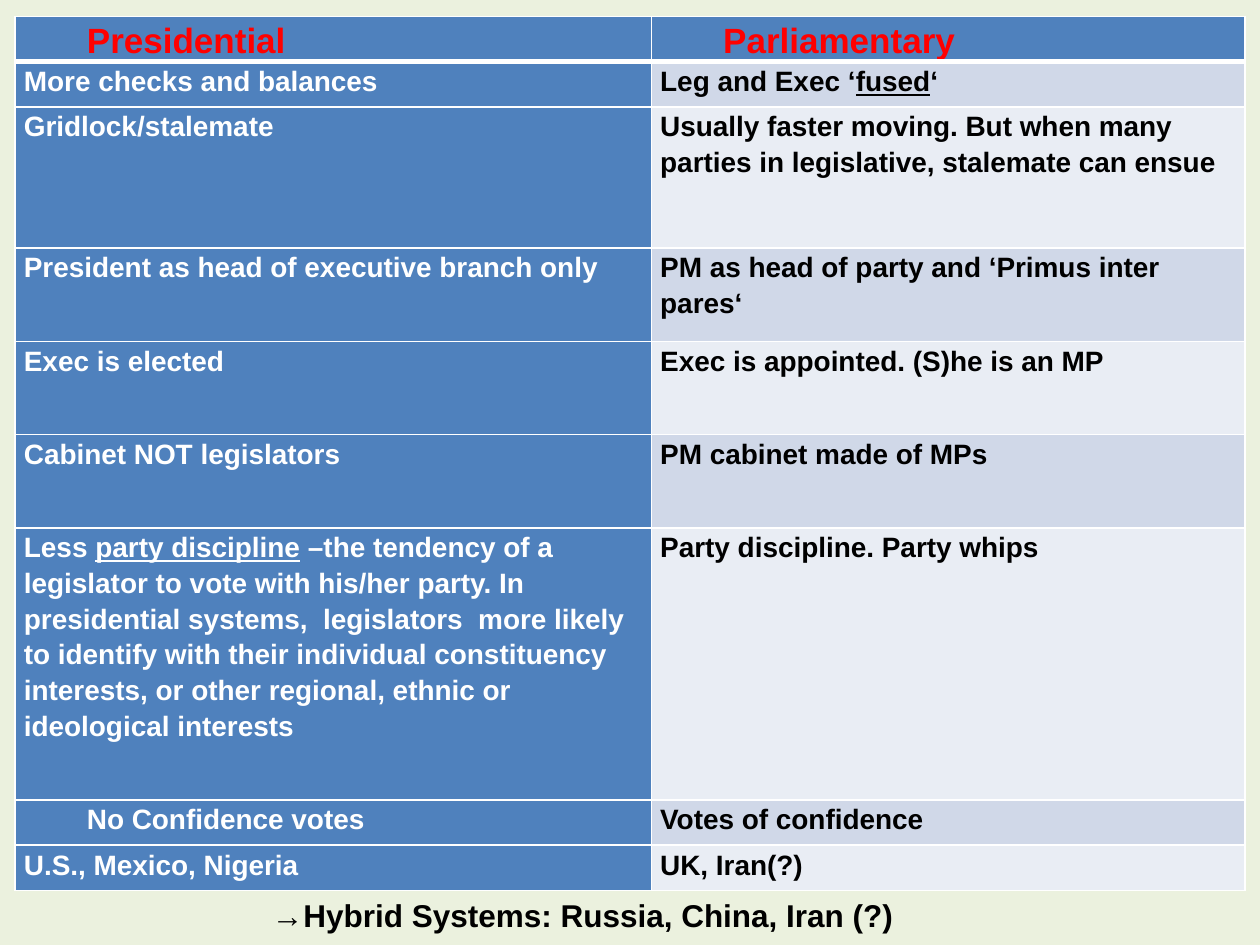
import pptx
import pptx.dml.color
import pptx.oxml
import pptx.oxml.ns
import pptx.util
from pptx.util import Inches

RGBColor = pptx.dml.color.RGBColor
BACKGROUND = RGBColor(0xEB, 0xF1, 0xDE)
BLUE = RGBColor(0x4F, 0x81, 0xBD)
BANDS = [RGBColor(0xE9, 0xED, 0xF4), RGBColor(0xD0, 0xD8, 0xE8)]
RED = RGBColor(0xFF, 0x00, 0x00)
WHITE = RGBColor(0xFF, 0xFF, 0xFF)
BLACK = RGBColor(0x00, 0x00, 0x00)

# Row height, presidential text, parliamentary text; "_" encloses underlined words.
ROWS = [
    (0.36, "Presidential", "Parliamentary"),
    (0.36, "More checks and balances", "Leg and Exec ‘_fused_‘"),
    (1.12, "Gridlock/stalemate",
     "Usually faster moving. But when many parties in legislative, stalemate can ensue"),
    (0.74, "President as head of executive branch only",
     "PM as head of party and ‘Primus inter pares‘"),
    (0.74, "Exec is elected", "Exec is appointed. (S)he is an MP"),
    (0.74, "Cabinet NOT legislators", "PM cabinet made of MPs"),
    (2.16, "Less _party discipline_ –the tendency of a legislator to vote with "
     "his/her party. In presidential systems,  legislators  more likely to identify "
     "with their individual constituency interests, or other regional, ethnic or "
     "ideological interests", "Party discipline. Party whips"),
    (0.36, "No Confidence votes", "Votes of confidence"),
    (0.36, "U.S., Mexico, Nigeria", "UK, Iran(?)"),
]
INDENTED = {"Presidential", "Parliamentary", "No Confidence votes"}


def write_text(frame, text, size=16, color=BLACK, spacing=None, indent=0):
    paragraph = frame.paragraphs[0]
    if spacing:
        paragraph.line_spacing = spacing
    if indent:
        properties = paragraph._p.get_or_add_pPr()
        properties.set("marL", str(Inches(indent)))
        properties.set("indent", "0")
    for position, part in enumerate(text.split("_")):
        run = paragraph.add_run()
        run.text = part
        run.font.name = "Arial"
        run.font.size = pptx.util.Pt(size)
        run.font.bold = True
        run.font.color.rgb = color
        if position % 2:
            run.font.underline = True


def set_borders(cell, **widths):
    """Draw white borders; widths are points by side, L, R, T and B."""
    for side, width in widths.items():
        cell._tc.get_or_add_tcPr().append(pptx.oxml.parse_xml(
            f'<a:ln{side} {pptx.oxml.ns.nsdecls("a")} w="{pptx.util.Pt(width)}">'
            f'<a:solidFill><a:srgbClr val="{WHITE}"/></a:solidFill></a:ln{side}>'))


presentation = pptx.Presentation()
presentation.slide_width = Inches(10)
presentation.slide_height = Inches(7.5)
slide = presentation.slides.add_slide(presentation.slide_layouts[6])
slide.background.fill.solid()
slide.background.fill.fore_color.rgb = BACKGROUND

comparison = slide.shapes.add_table(
    len(ROWS), 2, Inches(0.12), Inches(0.13), Inches(9.76),
    Inches(sum(height for height, *_ in ROWS))).table
comparison.columns[0].width = Inches(5.05)
comparison.columns[1].width = Inches(4.71)

for row, (height, *systems) in enumerate(ROWS):
    comparison.rows[row].height = Inches(height)
    for column, text in enumerate(systems):
        cell = comparison.cell(row, column)
        cell.margin_left = cell.margin_right = Inches(0.07)
        cell.margin_top = cell.margin_bottom = 0
        set_borders(cell, L=1, R=1, T=3 if row == 1 else 1, B=3 if row == 0 else 1)
        is_blue = row == 0 or column == 0
        cell.fill.solid()
        cell.fill.fore_color.rgb = BLUE if is_blue else BANDS[row % 2]
        write_text(cell.text_frame, text,
                   size=20 if row == 0 else 16,
                   color=RED if row == 0 else WHITE if is_blue else BLACK,
                   spacing=1.15, indent=0.5 if text in INDENTED else 0)

hybrid = slide.shapes.add_textbox(Inches(2.06), Inches(7.06), Inches(6.09), Inches(0.71))
hybrid.text_frame.word_wrap = True
write_text(hybrid.text_frame, "→Hybrid Systems: Russia, China, Iran (?)", size=18)

presentation.save("out.pptx")
